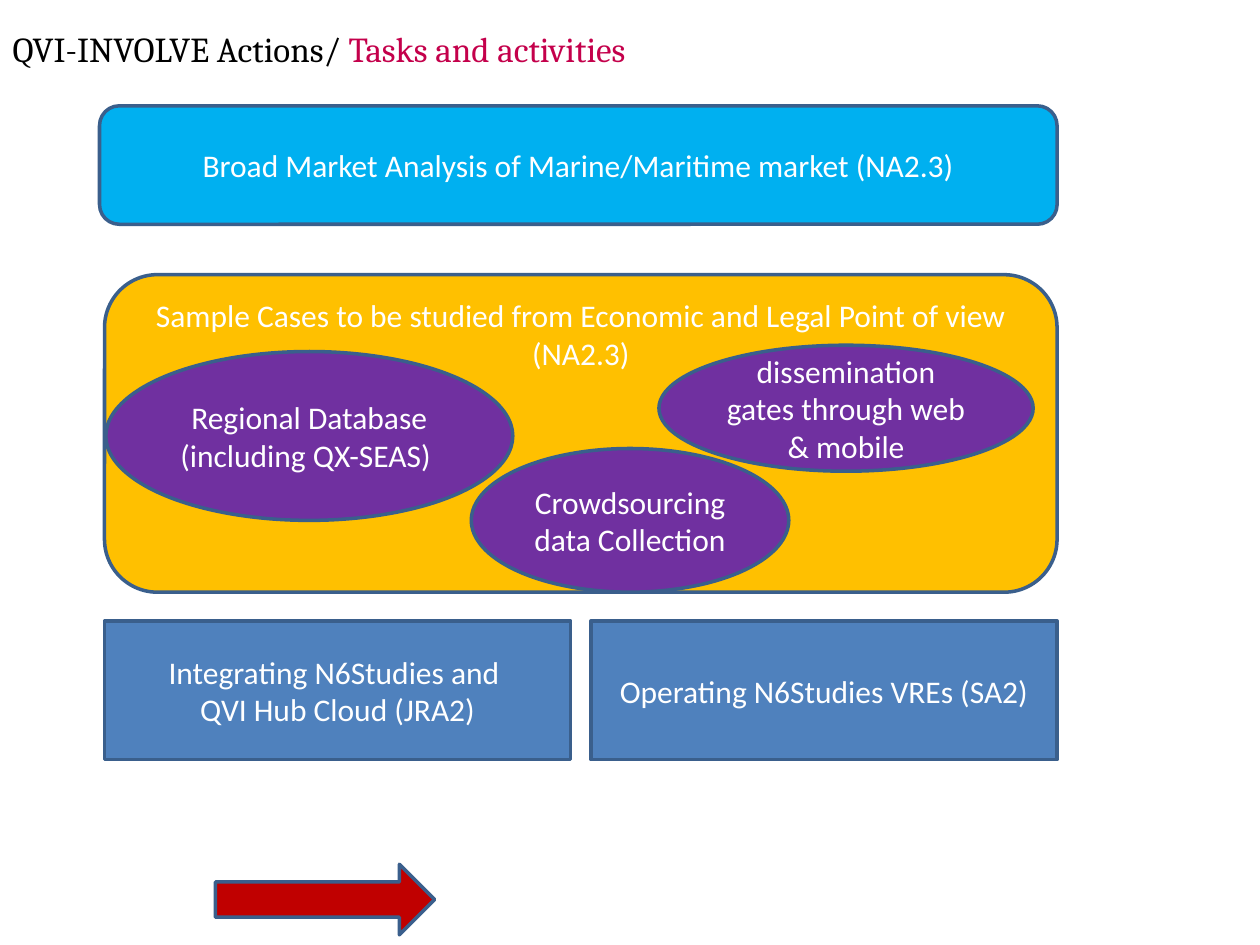
from typing import NamedTuple

from pptx import Presentation
from pptx.dml.color import RGBColor
from pptx.enum.shapes import MSO_SHAPE
from pptx.enum.text import MSO_ANCHOR, MSO_AUTO_SIZE, PP_ALIGN
from pptx.util import Inches, Pt

BLACK = RGBColor(0x00, 0x00, 0x00)
WHITE = RGBColor(0xFF, 0xFF, 0xFF)
CRIMSON = RGBColor(0xC4, 0x00, 0x4B)
RED = RGBColor(0xC0, 0x00, 0x00)
SKY = RGBColor(0x00, 0xB0, 0xF0)
AMBER = RGBColor(0xFF, 0xC0, 0x00)
PURPLE = RGBColor(0x70, 0x30, 0xA0)
BLUE = RGBColor(0x4F, 0x81, 0xBD)
OUTLINE = RGBColor(0x3A, 0x5F, 0x8C)

COLUMNS, ROWS = 20, 15
LEFT, RIGHT = 1.66, 16.78
TASK_GAP = 0.32
TASK_WIDTH = (RIGHT - LEFT - TASK_GAP) / 2


class Area(NamedTuple):
    column: float
    row: float
    columns: float
    rows: float


class Activity(NamedTuple):
    outline: MSO_SHAPE
    fill: RGBColor
    area: Area
    lines: tuple[str, ...] = ()
    anchor: MSO_ANCHOR = MSO_ANCHOR.MIDDLE


def task(index: int, *lines: str) -> Activity:
    column = LEFT + index * (TASK_WIDTH + TASK_GAP)
    return Activity(MSO_SHAPE.RECTANGLE, BLUE, Area(column, 9.86, TASK_WIDTH, 2.2), lines)


def sample_case(text: str, area: Area) -> Activity:
    return Activity(MSO_SHAPE.OVAL, PURPLE, area, (text,))


ACTIVITIES = (
    Activity(MSO_SHAPE.RIGHT_ARROW, RED, Area(3.42, 13.72, 3.48, 1.12)),
    task(0, "Integrating N6Studies and ", "QVI Hub Cloud (JRA2)"),
    task(1, "Operating N6Studies VREs (SA2)"),
    Activity(MSO_SHAPE.ROUNDED_RECTANGLE, SKY, Area(1.58, 1.68, RIGHT - 1.58, 1.88),
             ("Broad Market Analysis of Marine/Maritime market (NA2.3)",)),
    Activity(MSO_SHAPE.ROUNDED_RECTANGLE, AMBER, Area(LEFT, 4.36, RIGHT - LEFT, 5.04),
             ("Sample Cases to be studied from Economic and Legal Point of view (NA2.3)",),
             MSO_ANCHOR.TOP),
    sample_case("Regional Database (including QX-SEAS) ", Area(1.68, 5.58, 6.46, 2.68)),
    sample_case("Crowdsourcing data Collection", Area(7.48, 7.12, 5.04, 2.28)),
    sample_case("dissemination gates through web & mobile", Area(10.46, 5.48, 5.94, 2)),
)


def apply(target, formats: dict) -> None:
    for name, value in formats.items():
        setattr(target, name, value)


def bounds(area: Area, width: int, height: int) -> dict:
    return {
        "left": round(area.column * width / COLUMNS),
        "top": round(area.row * height / ROWS),
        "width": round(area.columns * width / COLUMNS),
        "height": round(area.rows * height / ROWS),
    }


def add_run(paragraph, text: str, font: str, size: int, color: RGBColor) -> None:
    run = paragraph.add_run()
    run.text = text
    apply(run.font, {"name": font, "size": Pt(size)})
    run.font.color.rgb = color


def write_heading(slide, width: int, height: int) -> None:
    heading = slide.shapes.title
    apply(heading, bounds(Area(0, 0.34, COLUMNS, 0.86), width, height))
    apply(heading.text_frame, {
        "word_wrap": True,
        "auto_size": MSO_AUTO_SIZE.SHAPE_TO_FIT_TEXT,
        "vertical_anchor": MSO_ANCHOR.MIDDLE,
    })
    paragraph = heading.text_frame.paragraphs[0]
    paragraph.alignment = PP_ALIGN.LEFT
    properties = paragraph._p.get_or_add_pPr()
    properties.set("marL", str(Inches(0.38)))
    properties.set("indent", str(Inches(-0.38)))
    add_run(paragraph, "QVI-INVOLVE Actions/ ", "Cambria", 20, BLACK)
    add_run(paragraph, "Tasks and activities", "Cambria", 20, CRIMSON)


def draw_activity(slide, activity: Activity, width: int, height: int) -> None:
    place = bounds(activity.area, width, height)
    shape = slide.shapes.add_shape(activity.outline, **place)
    shape.shadow.inherit = False
    shape.fill.solid()
    shape.fill.fore_color.rgb = activity.fill
    shape.line.color.rgb = OUTLINE
    shape.line.width = Pt(2)
    frame = shape.text_frame
    apply(frame, {"word_wrap": True, "vertical_anchor": activity.anchor})
    for index, text in enumerate(activity.lines):
        paragraph = frame.add_paragraph() if index else frame.paragraphs[0]
        paragraph.alignment = PP_ALIGN.CENTER
        add_run(paragraph, text, "Calibri", 18, WHITE)


def main() -> None:
    deck = Presentation()
    apply(deck, {"slide_width": Inches(10), "slide_height": Inches(7.5)})
    size = deck.slide_width, deck.slide_height
    slide = deck.slides.add_slide(deck.slide_layouts[5])
    write_heading(slide, *size)
    for activity in ACTIVITIES:
        draw_activity(slide, activity, *size)
    deck.save("out.pptx")


if __name__ == "__main__":
    main()
